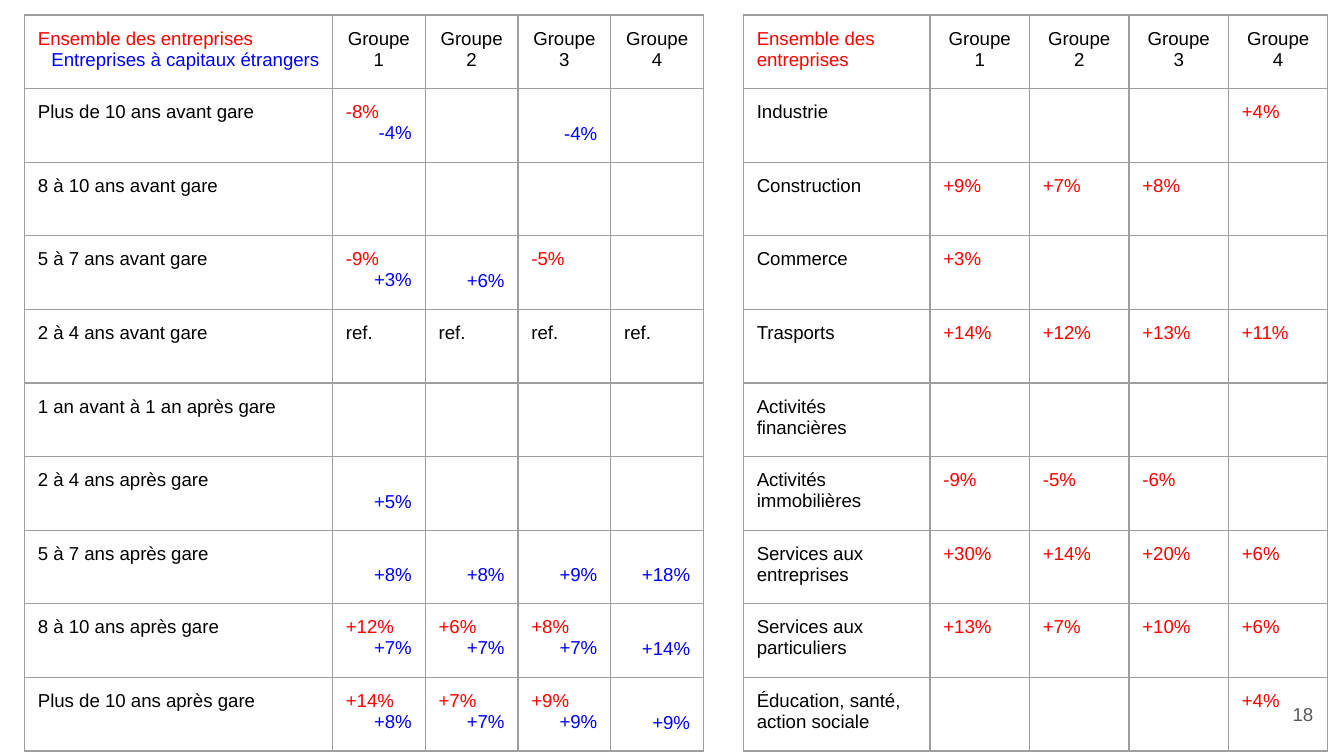
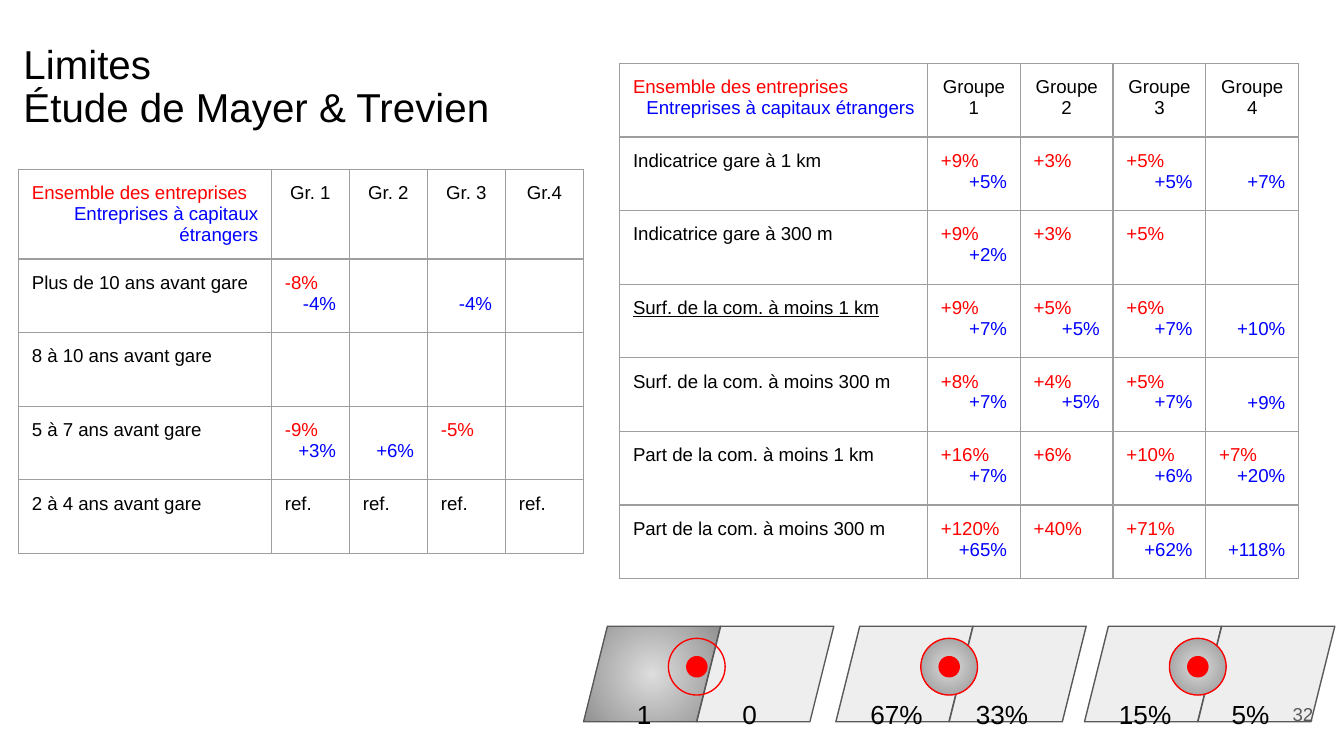
from pptx import Presentation
from pptx import util as u
from pptx.dml.color import RGBColor
from pptx.enum import shapes, text
from pptx.oxml import parse_xml
from pptx.oxml.ns import nsdecls, qn

Pt = u.Pt
FONT = "Arial"
BLACK, RED, BLUE = "000000", "FF0000", "0000FF"
BORDER, OUTLINE, NUMBER = "9E9E9E", "595959", "595959"
PALE, GRADIENT = "EEEEEE", ("DDDDDD", "919191")

LEFT, CENTER, RIGHT = text.PP_ALIGN.LEFT, text.PP_ALIGN.CENTER, text.PP_ALIGN.RIGHT
SHAPE = shapes.MSO_SHAPE
INSET = 7.2
LINE_HEIGHT = 11.5
ROW_HEIGHT = 39.43

# A slash separates the figure for all firms from the one for foreign-owned firms.
ALL_FIRMS = "Ensemble des entreprises"
BOTH_KINDS = ALL_FIRMS + "/Entreprises à capitaux étrangers"
GROUPS = [f"Groupe {number}" for number in range(1, 5)]
EMPTY = [""] * 4
REFERENCE = ["ref."] * 4

BEFORE_STATION = [
    ["Plus de 10 ans avant gare", "-8%/-4%", "", "/-4%", ""],
    ["8 à 10 ans avant gare", *EMPTY],
    ["5 à 7 ans avant gare", "-9%/+3%", "/+6%", "-5%", ""],
    ["2 à 4 ans avant gare", *REFERENCE],
]
AFTER_STATION = [
    ["1 an avant à 1 an après gare", *EMPTY],
    ["2 à 4 ans après gare", "/+5%", "", "", ""],
    ["5 à 7 ans après gare", "/+8%", "/+8%", "/+9%", "/+18%"],
    ["8 à 10 ans après gare", "+12%/+7%", "+6%/+7%", "+8%/+7%", "/+14%"],
    ["Plus de 10 ans après gare", "+14%/+8%", "+7%/+7%", "+9%/+9%", "/+9%"],
]
SECTORS = [
    ["Industrie", "", "", "", "+4%"],
    ["Construction", "+9%", "+7%", "+8%", ""],
    ["Commerce", "+3%", "", "", ""],
    ["Trasports", "+14%", "+12%", "+13%", "+11%"],
    ["Activités financières", *EMPTY],
    ["Activités immobilières", "-9%", "-5%", "-6%", ""],
    ["Services aux entreprises", "+30%", "+14%", "+20%", "+6%"],
    ["Services aux particuliers", "+13%", "+7%", "+10%", "+6%"],
    ["Éducation, santé, action sociale", "", "", "", "+4%"],
]
KEPT_MEASURE = "Surf. de la com. à moins 1 km"
MEASURES = [
    ["Indicatrice gare à 1 km", "+9%/+5%", "+3%", "+5%/+5%", "/+7%"],
    ["Indicatrice gare à 300 m", "+9%/+2%", "+3%", "+5%", ""],
    [KEPT_MEASURE, "+9%/+7%", "+5%/+5%", "+6%/+7%", "/+10%"],
    ["Surf. de la com. à moins 300 m", "+8%/+7%", "+4%/+5%", "+5%/+7%", "/+9%"],
    ["Part de la com. à moins 1 km", "+16%/+7%", "+6%", "+10%/+6%", "+7%/+20%"],
    ["Part de la com. à moins 300 m", "+120%/+65%", "+40%", "+71%/+62%", "/+118%"],
]


def rgb(value):
    return RGBColor.from_string(value)


def write(frame, lines, size=10, color=BLACK, align=LEFT, underline=None, spacing=None):
    """Write each line as a paragraph; a line is text or (text, color, align)."""
    for index, line in enumerate(lines):
        content, line_color, line_align = (
            (line, color, align) if isinstance(line, str) else line)
        paragraph = frame.paragraphs[0] if index == 0 else frame.add_paragraph()
        paragraph.alignment = line_align
        if spacing:
            paragraph.line_spacing = spacing
        run = paragraph.add_run()
        run.text = content
        run.font.name = FONT
        run.font.size = Pt(size)
        run.font.color.rgb = rgb(line_color)
        run.font.underline = underline


def set_insets(target, horizontal, vertical):
    target.margin_left = target.margin_right = Pt(horizontal)
    target.margin_top = target.margin_bottom = Pt(vertical)


def set_borders(cell):
    properties = cell._tc.get_or_add_tcPr()
    for index, side in enumerate(("lnL", "lnR", "lnT", "lnB")):
        properties.insert(index, parse_xml(
            f'<a:{side} {nsdecls("a")} w="{Pt(0.75)}"><a:solidFill>'
            f'<a:srgbClr val="{BORDER}"/></a:solidFill></a:{side}>'))


def make_radial(shape):
    shape.fill.gradient()
    for stop, color in zip(shape.fill.gradient_stops, GRADIENT):
        stop.color.rgb = rgb(color)
    gradient = shape._element.spPr.find(qn("a:gradFill"))
    gradient.replace(gradient.find(qn("a:lin")), parse_xml(
        f'<a:path {nsdecls("a")} path="circle">'
        '<a:fillToRect l="50000" t="50000" r="50000" b="50000"/></a:path>'))


class Deck:
    def __init__(self):
        self.presentation = Presentation()
        self.presentation.slide_width = Pt(720)
        self.presentation.slide_height = Pt(405)
        self.slide = None

    def add_slide(self, number, title=None):
        layout = self.presentation.slide_layouts[5 if title else 6]
        self.slide = self.presentation.slides.add_slide(layout)
        if title:
            self.title(title)
        self.number = number

    def title(self, lines):
        shape = self.slide.shapes.title
        shape.left, shape.top = Pt(7.4), Pt(21.6)
        shape.width, shape.height = Pt(293.8), Pt(51)
        frame = shape.text_frame
        frame.auto_size = text.MSO_AUTO_SIZE.NONE
        frame.vertical_anchor = text.MSO_ANCHOR.MIDDLE
        set_insets(frame, 5.2, 2.6)
        write(frame, lines, size=21.6, spacing=0.9)

    def page_number(self):
        self.label(str(self.number), 667.4, 367.2, 43.2, 31, color=NUMBER,
                   align=RIGHT, anchor=text.MSO_ANCHOR.MIDDLE)

    def label(self, content, left, top, width, height,
              anchor=text.MSO_ANCHOR.TOP, **style):
        box = self.slide.shapes.add_textbox(Pt(left), Pt(top), Pt(width), Pt(height))
        frame = box.text_frame
        frame.word_wrap = True
        frame.vertical_anchor = anchor
        set_insets(frame, INSET, INSET)
        write(frame, [content], **style)

    def table(self, left, top, label_width, group_width, rows):
        widths = [label_width] + [group_width] * (len(rows[0]) - 1)
        frame = self.slide.shapes.add_table(
            len(rows), len(widths), Pt(left), Pt(top),
            Pt(sum(widths)), Pt(ROW_HEIGHT * len(rows)))
        table = frame.table
        table.first_row = table.horz_banding = False
        for column, width in zip(table.columns, widths):
            column.width = Pt(width)
        for row_index, row in enumerate(rows):
            table.rows[row_index].height = Pt(ROW_HEIGHT)
            for column_index, content in enumerate(row):
                self.cell(table.cell(row_index, column_index), content,
                          is_header=row_index == 0, is_label=column_index == 0)

    def cell(self, cell, content, is_header, is_label):
        cell.fill.background()
        set_borders(cell)
        set_insets(cell, INSET, INSET)
        if not content:
            return
        if is_header and not is_label:
            write(cell.text_frame, [content], align=CENTER)
        elif content == "ref." or (is_label and not is_header):
            write(cell.text_frame, [content],
                  underline=True if content == KEPT_MEASURE else None)
        else:
            all_firms, _, foreign = content.partition("/")
            lines = [(all_firms, RED, LEFT), (foreign, BLUE, RIGHT)]
            if not all_firms:
                cell.margin_top = Pt(INSET + LINE_HEIGHT)
            write(cell.text_frame, [line for line in lines if line[0]])

    def shape(self, kind, left, top, width, height, fill=None, line=OUTLINE):
        shape = self.slide.shapes.add_shape(
            kind, Pt(left), Pt(top), Pt(width), Pt(height))
        shape.shadow.inherit = False
        shape.line.color.rgb = rgb(line)
        shape.line.width = Pt(0.75)
        if fill is None:
            shape.fill.background()
        elif fill == GRADIENT:
            make_radial(shape)
        else:
            shape.fill.solid()
            shape.fill.fore_color.rgb = rgb(fill)
        return shape

    def circle(self, kind, center_x, center_y, size, fill):
        self.shape(kind, center_x - size / 2, center_y - size / 2, size, size,
                   fill=fill, line=RED)

    def town_pair(self, left, town_fill, ring_fill):
        """Two neighbouring towns with a station and the ring around it."""
        seam = left + 60.7
        for town_left, fill in ((left, town_fill), (seam, PALE)):
            town = self.shape(SHAPE.PARALLELOGRAM, town_left, 335.5, 73.4, 51.2, fill)
            town.adjustments[0] = 0.25
        self.circle(SHAPE.OVAL, seam, 357.2, 30.4, ring_fill)
        self.circle(SHAPE.FLOWCHART_SUMMING_JUNCTION, seam, 357.2, 10.8, RED)


def main():
    deck = Deck()

    # Effects by period and by sector
    deck.add_slide(18)
    deck.table(13.1, 8, 165, 49.7,
               [[BOTH_KINDS, *GROUPS], *BEFORE_STATION, *AFTER_STATION])
    deck.table(398.2, 8, 100, 53.3, [[ALL_FIRMS, *GROUPS], *SECTORS])
    deck.page_number()

    # Limits of the study
    deck.add_slide(32, title=["Limites", "Étude de Mayer & Trevien"])
    deck.table(331.9, 34, 165, 49.7, [[BOTH_KINDS, *GROUPS], *MEASURES])
    short_groups = ["Gr. 1", "Gr. 2", "Gr. 3", "Gr.4"]
    deck.table(9.9, 90.8, 135.5, 41.8, [[BOTH_KINDS, *short_groups], *BEFORE_STATION])

    # Three ways to measure how close a town is to a station
    town_pairs = [
        (312.6, GRADIENT, None, ("1", "0")),
        (447.8, PALE, GRADIENT, ("67%", "33%")),
        (581, PALE, GRADIENT, ("15%", "5%")),
    ]
    for left, town_fill, ring_fill, _ in town_pairs:
        deck.town_pair(left, town_fill, ring_fill)
    for left, _, _, shares in town_pairs:
        for share, offset in zip(shares, (32.5, 89)):
            deck.label(share, left + offset - 28, 367.2, 56, 31.6,
                       size=14, align=CENTER)
    deck.page_number()

    deck.presentation.save("out.pptx")


if __name__ == "__main__":
    main()
